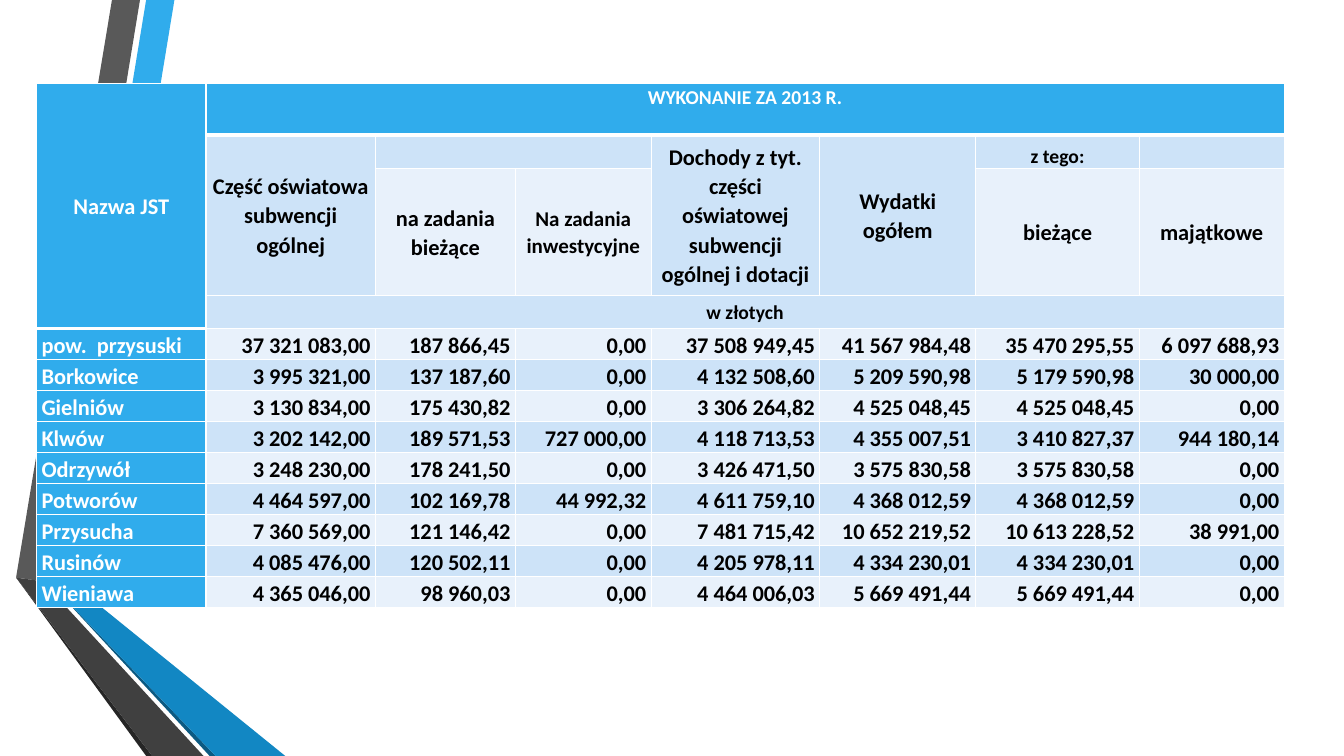
import dataclasses
import typing

import lxml.etree
import pptx
import pptx.dml.color
import pptx.enum.text
import pptx.oxml.ns
import pptx.util

Pt = pptx.util.Pt
RGBColor = pptx.dml.color.RGBColor
ALIGN = pptx.enum.text.PP_ALIGN
ANCHOR = pptx.enum.text.MSO_ANCHOR

BLUE = RGBColor(0x30, 0xAC, 0xEC)
DEEP_BLUE = RGBColor(0x12, 0x87, 0xC3)
NAVY = RGBColor(0x0C, 0x5A, 0x82)
GREY = RGBColor(0x59, 0x59, 0x59)
DARK_GREY = RGBColor(0x40, 0x40, 0x40)
NEAR_BLACK = RGBColor(0x26, 0x26, 0x26)
BAND = RGBColor(0xCD, 0xE3, 0xF8)
PALE = RGBColor(0xE8, 0xF1, 0xFB)
WHITE = RGBColor(0xFF, 0xFF, 0xFF)
BLACK = RGBColor(0x00, 0x00, 0x00)

FONT = "Calibri"
TABLE_LEFT, TABLE_TOP = 26.2, 59.6
COLUMN_WIDTHS = [121, 121, 100, 97, 120.5, 111.5, 116.7, 103.5]
HEADER_HEIGHTS = [36.7, 24.2, 90.7, 23.6]
DATA_HEIGHT = 22.15


@dataclasses.dataclass(frozen=True)
class Ribbon:
    color: RGBColor
    points: list[tuple[float, float]]


@dataclasses.dataclass(frozen=True)
class Heading:
    row: int
    col: int
    text: str
    fill: RGBColor = BAND
    size: float = 16
    color: RGBColor = BLACK
    rows: int = 1
    cols: int = 1
    anchor: ANCHOR = ANCHOR.MIDDLE
    bottom: float = 0


RIBBONS = [
    Ribbon(BLUE, [(36, 416.2), (55.4, 419.8), (124.6, 0), (104.4, 0)]),
    Ribbon(GREY, [(100, 0), (80, 0), (11.5, 412.6), (31.7, 415.4)]),
    Ribbon(NEAR_BLACK, [(11.5, 412.6), (104.4, 540), (108.7, 540)]),
    Ribbon(NAVY, [(36, 416.9), (149.8, 540), (154.1, 540)]),
    Ribbon(DEEP_BLUE, [(36, 416.9), (154.1, 540), (203.8, 540), (55.4, 419.8), (36, 416.2)]),
    Ribbon(DARK_GREY, [(145.4, 540), (34.6, 419.8), (31, 416.2), (31.7, 415.4),
                       (11.5, 412.6), (108.7, 540)]),
]

HEADINGS = [
    Heading(0, 0, "Nazwa JST", BLUE, color=WHITE, rows=4),
    Heading(0, 1, "WYKONANIE ZA 2013 R.", BLUE, 14, WHITE, cols=7,
            anchor=ANCHOR.BOTTOM, bottom=18.3),
    Heading(1, 1, "Część oświatowa subwencji ogólnej", rows=2),
    Heading(1, 2, "", cols=2),
    Heading(1, 4, "Dochody z tyt. części oświatowej subwencji ogólnej i dotacji", rows=2),
    Heading(1, 5, "Wydatki ogółem", rows=2),
    Heading(1, 6, "z tego:", size=14, anchor=ANCHOR.BOTTOM),
    Heading(1, 7, ""),
    Heading(2, 2, "na zadania bieżące", PALE),
    Heading(2, 3, "Na zadania inwestycyjne", PALE, 15),
    Heading(2, 6, "bieżące", PALE),
    Heading(2, 7, "majątkowe", PALE),
    Heading(3, 1, "w złotych", size=14, cols=7),
]

DATA = [
    ["pow.  przysuski", "37 321 083,00", "187 866,45", "0,00", "37 508 949,45",
     "41 567 984,48", "35 470 295,55", "6 097 688,93"],
    ["Borkowice", "3 995 321,00", "137 187,60", "0,00", "4 132 508,60",
     "5 209 590,98", "5 179 590,98", "30 000,00"],
    ["Gielniów", "3 130 834,00", "175 430,82", "0,00", "3 306 264,82",
     "4 525 048,45", "4 525 048,45", "0,00"],
    ["Klwów", "3 202 142,00", "189 571,53", "727 000,00", "4 118 713,53",
     "4 355 007,51", "3 410 827,37", "944 180,14"],
    ["Odrzywół", "3 248 230,00", "178 241,50", "0,00", "3 426 471,50",
     "3 575 830,58", "3 575 830,58", "0,00"],
    ["Potworów", "4 464 597,00", "102 169,78", "44 992,32", "4 611 759,10",
     "4 368 012,59", "4 368 012,59", "0,00"],
    ["Przysucha", "7 360 569,00", "121 146,42", "0,00", "7 481 715,42",
     "10 652 219,52", "10 613 228,52", "38 991,00"],
    ["Rusinów", "4 085 476,00", "120 502,11", "0,00", "4 205 978,11",
     "4 334 230,01", "4 334 230,01", "0,00"],
    ["Wieniawa", "4 365 046,00", "98 960,03", "0,00", "4 464 006,03",
     "5 669 491,44", "5 669 491,44", "0,00"],
]


def draw_ribbon(slide: typing.Any, ribbon: Ribbon) -> None:
    corners = [(Pt(x), Pt(y)) for x, y in ribbon.points]
    outline = slide.shapes.build_freeform(*corners[0], scale=1.0)
    outline.add_line_segments(corners[1:], close=True)
    band = outline.convert_to_shape()
    band.shadow.inherit = False
    band.fill.solid()
    band.fill.fore_color.rgb = ribbon.color
    band.line.fill.background()


def set_borders(cell: typing.Any, bottom_width: float) -> None:
    properties = cell._tc.get_or_add_tcPr()
    for side, width in (("L", 1), ("R", 1), ("T", 1), ("B", bottom_width)):
        edge = lxml.etree.SubElement(
            properties, pptx.oxml.ns.qn(f"a:ln{side}"), w=str(int(Pt(width))))
        paint = lxml.etree.SubElement(edge, pptx.oxml.ns.qn("a:solidFill"))
        lxml.etree.SubElement(paint, pptx.oxml.ns.qn("a:srgbClr"), val=str(WHITE))


def write(cell: typing.Any, text: str, *, fill: RGBColor, color: RGBColor = BLACK,
          size: float = 16, align: ALIGN = ALIGN.CENTER,
          anchor: ANCHOR = ANCHOR.MIDDLE, bottom: float = 0) -> None:
    cell.fill.solid()
    cell.fill.fore_color.rgb = fill
    cell.vertical_anchor = anchor
    cell.margin_bottom = Pt(bottom)
    if not text:
        return
    paragraph = cell.text_frame.paragraphs[0]
    paragraph.alignment = align
    paragraph.line_spacing = 1.07
    run = paragraph.add_run()
    run.text = text
    run.font.name = FONT
    run.font.size = Pt(size)
    run.font.bold = True
    run.font.color.rgb = color


def draw_table(slide: typing.Any) -> None:
    heights = HEADER_HEIGHTS + [DATA_HEIGHT] * len(DATA)
    table = slide.shapes.add_table(
        len(heights), len(COLUMN_WIDTHS), Pt(TABLE_LEFT), Pt(TABLE_TOP),
        Pt(sum(COLUMN_WIDTHS)), Pt(sum(heights))).table
    table.first_row = table.horz_banding = False
    for column, width in zip(table.columns, COLUMN_WIDTHS):
        column.width = Pt(width)

    # Row heights, margins and grid lines
    for r, height in enumerate(heights):
        table.rows[r].height = Pt(height)
        for c in range(len(COLUMN_WIDTHS)):
            cell = table.cell(r, c)
            cell.margin_left = cell.margin_right = Pt(3.5)
            cell.margin_top = cell.margin_bottom = 0
            thick = r == 0 or (c == 0 and r < len(HEADER_HEIGHTS))
            set_borders(cell, 3 if thick else 1)

    # Headings
    for h in HEADINGS:
        cell = table.cell(h.row, h.col)
        if h.rows > 1 or h.cols > 1:
            cell.merge(table.cell(h.row + h.rows - 1, h.col + h.cols - 1))
        write(cell, h.text, fill=h.fill, color=h.color, size=h.size,
              anchor=h.anchor, bottom=h.bottom)

    # Municipalities and their amounts
    for r, (name, *amounts) in enumerate(DATA):
        row = r + len(HEADER_HEIGHTS)
        write(table.cell(row, 0), name, fill=BLUE, color=WHITE,
              align=ALIGN.JUSTIFY, anchor=ANCHOR.BOTTOM)
        for c, amount in enumerate(amounts, start=1):
            write(table.cell(row, c), amount, fill=BAND if r % 2 else PALE,
                  align=ALIGN.RIGHT, anchor=ANCHOR.BOTTOM)


def main() -> None:
    presentation = pptx.Presentation()
    presentation.slide_width, presentation.slide_height = Pt(960), Pt(540)
    slide = presentation.slides.add_slide(presentation.slide_layouts[6])
    for ribbon in RIBBONS:
        draw_ribbon(slide, ribbon)
    draw_table(slide)
    presentation.save("out.pptx")


if __name__ == "__main__":
    main()
